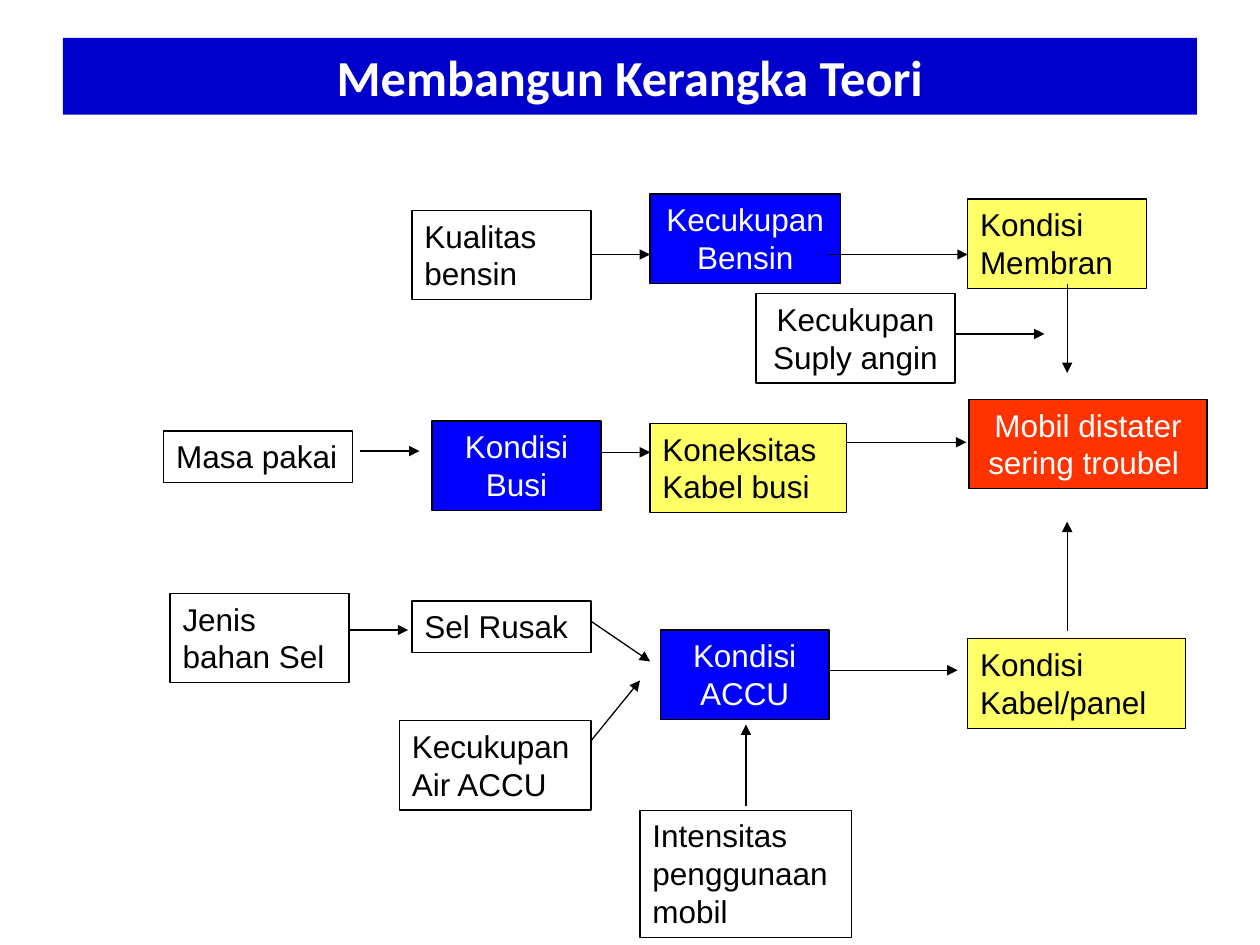
import pptx
import pptx.util
import pptx.dml.color
import pptx.enum.shapes
import pptx.enum.text
import pptx.oxml.ns
from lxml import etree

Inches, Pt = pptx.util.Inches, pptx.util.Pt
LEFT = pptx.enum.text.PP_ALIGN.LEFT
MID = pptx.enum.text.PP_ALIGN.CENTER

TITLE = "Membangun Kerangka Teori"
BLACK, WHITE = "000000", "FFFFFF"

# style: fill, text colour, alignment
STYLES = {
    "goal": ("FF3300", WHITE, MID),
    "main": ("0000FF", WHITE, MID),
    "link": ("FFFF66", BLACK, LEFT),
    "cause": (None, BLACK, LEFT),
    "supply": (None, BLACK, MID),
}

# text, style, left, top, width, number of lines
BOXES = [
    ("Mobil distater sering troubel ", "goal", 7.69, 3.17, 1.89, 2),
    ("Kecukupan Bensin", "main", 5.16, 1.54, 1.51, 2),
    ("Kondisi Busi", "main", 3.43, 3.34, 1.34, 2),
    ("Kondisi ACCU", "main", 5.24, 5, 1.34, 2),
    ("Sel Rusak", "cause", 3.27, 4.77, 1.42, 1),
    ("Kecukupan Air ACCU", "cause", 3.17, 5.72, 1.52, 2),
    ("Kondisi Kabel/panel", "link", 7.68, 5.07, 1.73, 2),
    ("Kondisi Membran", "link", 7.68, 1.58, 1.42, 2),
    ("Kualitas bensin", "cause", 3.27, 1.67, 1.42, 2),
    ("Masa pakai", "cause", 1.3, 3.42, 1.5, 1),
    ("Kecukupan\nSuply angin", "supply", 6, 2.33, 1.58, 2),
    ("Koneksitas Kabel busi", "link", 5.16, 3.36, 1.56, 2),
    ("Jenis bahan Sel", "cause", 1.35, 4.71, 1.42, 2),
    ("Intensitas penggunaan mobil", "cause", 5.08, 6.43, 1.68, 3),
]

# from x, from y, to x, to y
ARROWS = [
    (6.57, 5.32, 7.6, 5.32),
    (6.72, 3.51, 7.67, 3.51),
    (6.57, 2.02, 7.68, 2.02),
    (8.47, 5.01, 8.47, 4.14),
    (4.69, 4.93, 5.16, 5.25),
    (4.69, 5.88, 5.08, 5.4),
    (8.47, 2.25, 8.47, 2.96),
    (2.86, 3.58, 3.33, 3.58),
    (4.69, 2.02, 5.16, 2.02),
    (7.58, 2.65, 8.29, 2.65),
    (4.76, 3.59, 5.16, 3.59),
    (2.77, 5, 3.24, 5),
    (5.92, 6.4, 5.92, 5.75),
]


def paint(color, code):
    color.rgb = pptx.dml.color.RGBColor.from_string(code)


def add_box(slide, text, place, fill, ink, align, face="Arial", size=18):
    kind = pptx.enum.shapes.MSO_SHAPE.RECTANGLE
    box = slide.shapes.add_shape(kind, *map(Inches, place))
    box.shadow.inherit = False
    if fill:
        box.fill.solid()
        paint(box.fill.fore_color, fill)
    else:
        box.fill.background()
    paint(box.line.color, BLACK)
    box.line.width = Pt(0.75)
    frame = box.text_frame
    frame.word_wrap = True
    frame.vertical_anchor = pptx.enum.text.MSO_ANCHOR.TOP
    para = frame.paragraphs[0]
    para.alignment = align
    for i, line in enumerate(text.split("\n")):
        if i:
            para.add_line_break()
        run = para.add_run()
        run.text = line
        run.font.name = face
        run.font.size = Pt(size)
        paint(run.font.color, ink)
    return box


def add_arrow(slide, ends):
    kind = pptx.enum.shapes.MSO_CONNECTOR.STRAIGHT
    arrow = slide.shapes.add_connector(kind, *map(Inches, ends))
    paint(arrow.line.color, BLACK)
    arrow.line.width = Pt(0.75)
    qn = pptx.oxml.ns.qn
    etree.SubElement(arrow.line._get_or_add_ln(), qn("a:tailEnd"), type="triangle")
    etree.SubElement(arrow._element.spPr, qn("a:effectLst"))


def main():
    deck = pptx.Presentation()
    deck.slide_width, deck.slide_height = Inches(10), Inches(7.5)
    slide = deck.slides.add_slide(deck.slide_layouts[6])

    title = add_box(slide, TITLE, (0.5, 0.3, 9, 0.61), "0000CC", WHITE, MID, "Calibri", 28.8)
    title.line.fill.background()
    title.text_frame.vertical_anchor = pptx.enum.text.MSO_ANCHOR.MIDDLE
    title.text_frame.paragraphs[0].runs[0].font.bold = True

    for text, style, left, top, width, lines in BOXES:
        place = left, top, width, 0.11 + 0.3 * lines
        add_box(slide, text, place, *STYLES[style])
    for ends in ARROWS:
        add_arrow(slide, ends)
    deck.save("out.pptx")


if __name__ == "__main__":
    main()
